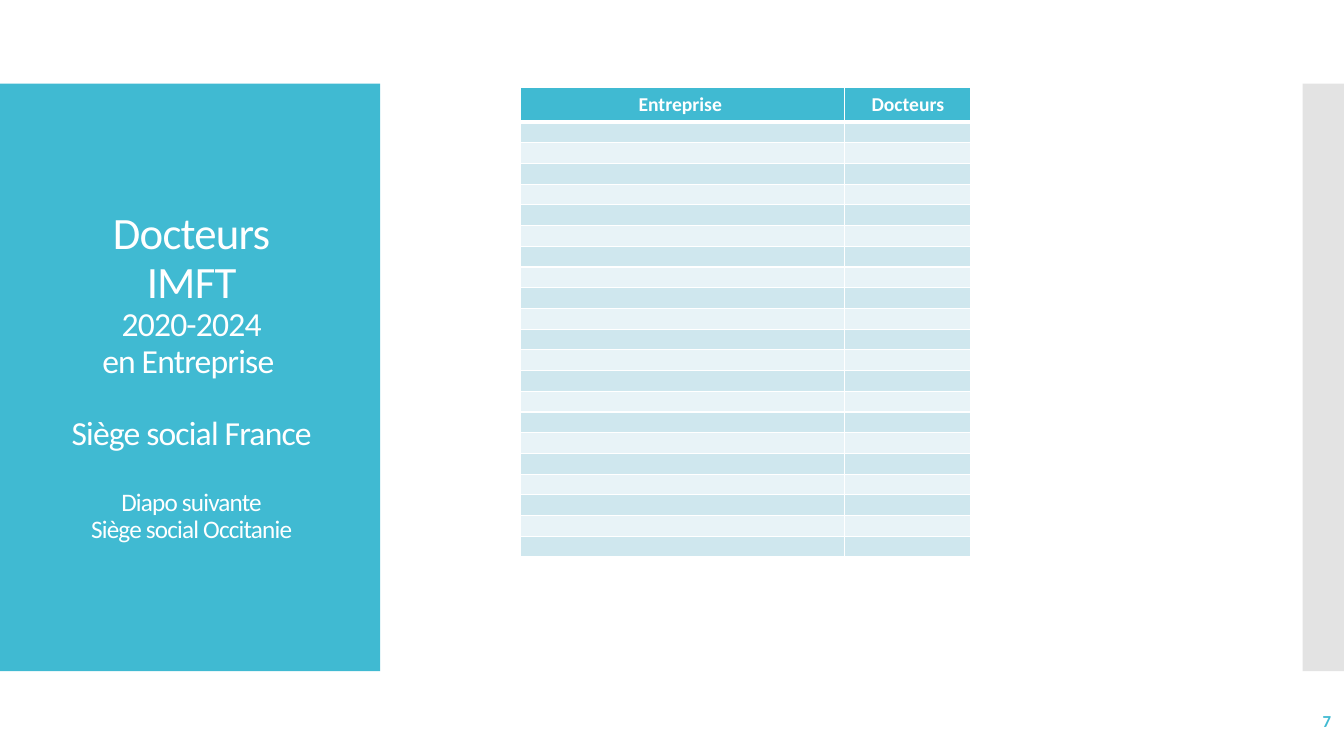
from lxml.etree import SubElement
from pptx import Presentation
from pptx.dml.color import RGBColor
from pptx.enum.shapes import MSO_SHAPE as Shape
from pptx.enum.text import MSO_ANCHOR as Anchor, PP_ALIGN as Align
from pptx.oxml.ns import qn
from pptx.util import Inches, Pt

TEAL = RGBColor(0x40, 0xBA, 0xD2)
GREY = RGBColor(0xC8, 0xC8, 0xC8)
WHITE = RGBColor(0xFF, 0xFF, 0xFF)
BAND_DARK = RGBColor(0xCF, 0xE7, 0xEE)
BAND_LIGHT = RGBColor(0xE8, 0xF3, 0xF7)
FONT = "Calibri"
TITLE_LINES = [
    ("Docteurs", 32, 0),
    ("IMFT", 32, 0),
    ("2020-2024", 24, 0),
    ("en Entreprise ", 24, 0),
    ("Siège social France", 24, 26),
    ("Diapo suivante", 18, 26),
    ("Siège social Occitanie", 18, 0),
]
HEADERS = ["Entreprise ", "Docteurs"]
COLUMN_WIDTHS = [3.22, 1.25]
EMPTY_ROWS = 21
HEADER_HEIGHT = 0.34


def add_run(paragraph, text, size, color, bold=False):
    """Append a styled run to the paragraph and return it."""
    run = paragraph.add_run()
    run.text = text
    run.font.name = FONT
    run.font.size = Pt(size)
    run.font.bold = bold
    run.font.color.rgb = color
    return run


def add_panel(slide, left, top, width, height, color, opacity=100):
    """Draw a borderless rectangle with the given opacity in percent."""
    panel = slide.shapes.add_shape(
        Shape.RECTANGLE, Inches(left), Inches(top), Inches(width), Inches(height))
    panel.shadow.inherit = False
    panel.line.fill.background()
    panel.fill.solid()
    panel.fill.fore_color.rgb = color
    if opacity < 100:
        tint = panel.fill._xPr.find(".//" + qn("a:srgbClr"))
        SubElement(tint, qn("a:alpha"), val=str(opacity * 1000))


def add_text_frame(slide, left, top, width, height):
    """Add a wrapping, vertically centred text box and return its frame."""
    box = slide.shapes.add_textbox(
        Inches(left), Inches(top), Inches(width), Inches(height))
    frame = box.text_frame
    frame.word_wrap = True
    frame.vertical_anchor = Anchor.MIDDLE
    return frame


def add_title(slide, left, top, width, height):
    """Write the title lines in the given box."""
    frame = add_text_frame(slide, left, top, width, height)
    for index, (text, size, gap) in enumerate(TITLE_LINES):
        line = frame.add_paragraph() if index else frame.paragraphs[0]
        line.alignment = Align.CENTER
        line.line_spacing = 0.9
        line.space_before = Pt(gap)
        run = add_run(line, text, size, WHITE)
        run.font._element.set("spc", "-60")


def style_cell(cell, color, top_border, bottom_border):
    """Give a cell its white borders, fill and margins."""
    properties = cell._tc.get_or_add_tcPr()
    borders = {"lnL": 1, "lnR": 1, "lnT": top_border, "lnB": bottom_border}
    for side, points in borders.items():
        border = SubElement(properties, qn("a:" + side), w=str(Pt(points)))
        paint = SubElement(border, qn("a:solidFill"))
        SubElement(paint, qn("a:srgbClr"), val=str(WHITE))
    cell.fill.solid()
    cell.fill.fore_color.rgb = color
    cell.margin_top = cell.margin_bottom = 0


def add_company_table(slide, left, top, width, height):
    """Build the banded company table in the given box."""
    table = slide.shapes.add_table(
        EMPTY_ROWS + 1, len(HEADERS),
        Inches(left), Inches(top), Inches(width), Inches(height)).table
    for column, column_width in zip(table.columns, COLUMN_WIDTHS):
        column.width = Inches(column_width)
    for row in table.rows:
        row.height = Inches((height - HEADER_HEIGHT) / EMPTY_ROWS)
    table.rows[0].height = Inches(HEADER_HEIGHT)

    for cell, text in zip(table.rows[0].cells, HEADERS):
        style_cell(cell, TEAL, 1, 3)
        cell.vertical_anchor = Anchor.MIDDLE
        heading = cell.text_frame.paragraphs[0]
        heading.alignment = Align.CENTER
        add_run(heading, text, 14, WHITE, bold=True)

    for index in range(1, EMPTY_ROWS + 1):
        band = BAND_DARK if index % 2 else BAND_LIGHT
        for cell in table.rows[index].cells:
            style_cell(cell, band, 3 if index == 1 else 1, 1)
            paragraph = cell.text_frame.paragraphs[0]
            SubElement(paragraph._p, qn("a:endParaRPr"), sz="800")


def add_page_number(slide, left, top, width, height):
    """Write the page number at the right of the given box."""
    frame = add_text_frame(slide, left, top, width, height)
    number = frame.paragraphs[0]
    number.alignment = Align.RIGHT
    add_run(number, "7", 12, TEAL, bold=True)


def main():
    """Build and save the slide."""
    deck = Presentation()
    deck.slide_width = Inches(13.33)
    deck.slide_height = Inches(7.5)
    slide = deck.slides.add_slide(deck.slide_layouts[6])
    add_panel(slide, 0, 0.83, 3.77, 5.83, TEAL)
    add_panel(slide, 12.92, 0.83, 0.41, 5.83, GREY, opacity=50)
    add_title(slide, 0.09, 1.23, 3.62, 5.03)
    add_company_table(slide, 5.16, 0.87, 4.47, 4.66)
    add_page_number(slide, 11.63, 6.95, 1.67, 0.4)
    deck.save("out.pptx")


if __name__ == "__main__":
    main()
